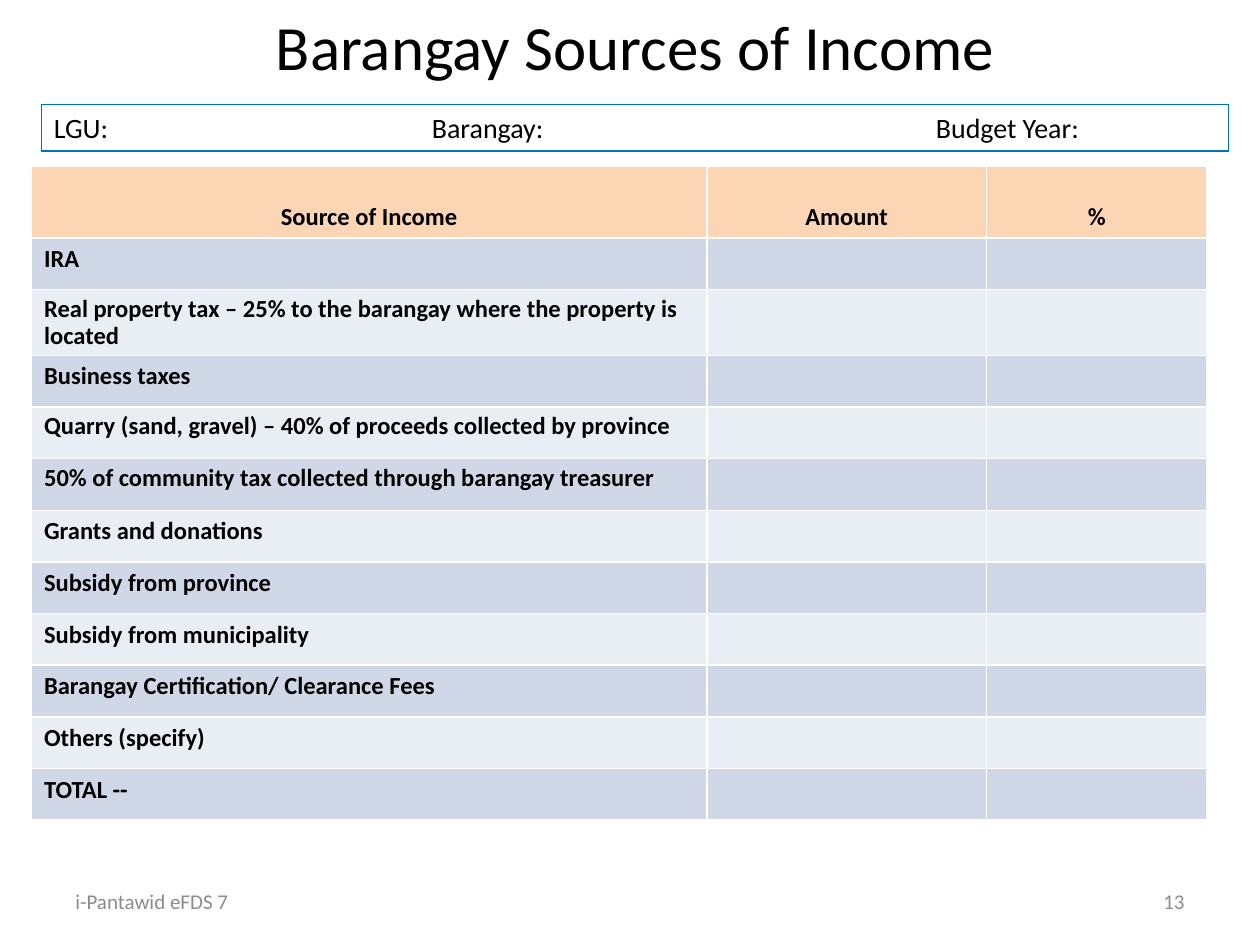
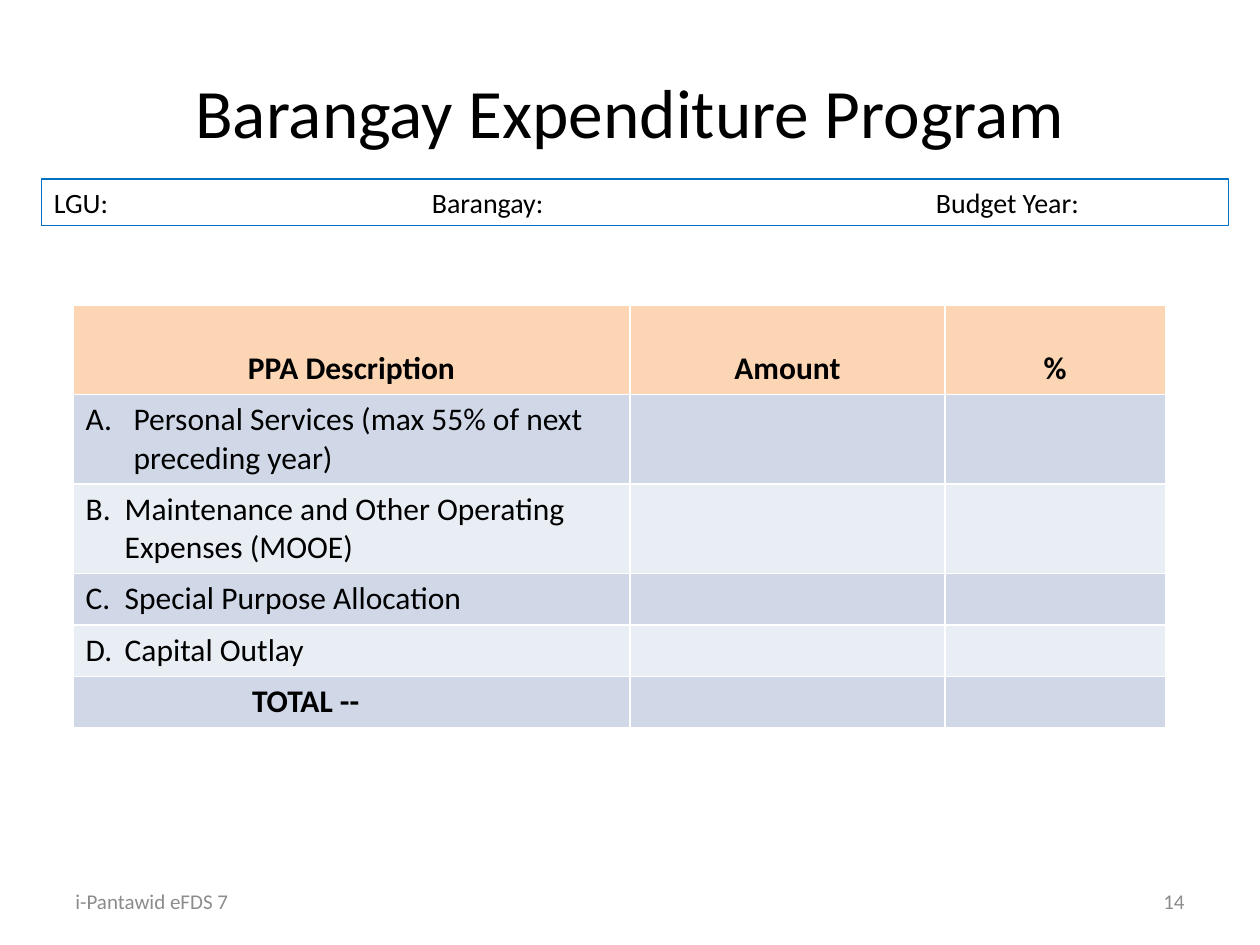
from lxml import etree
from pptx import Presentation
from pptx.dml.color import RGBColor
from pptx.enum.shapes import MSO_SHAPE
from pptx.enum.text import MSO_ANCHOR, MSO_AUTO_SIZE, PP_ALIGN
from pptx.oxml.ns import qn
from pptx.util import Inches, Pt

LEFT, CENTER, RIGHT = PP_ALIGN.LEFT, PP_ALIGN.CENTER, PP_ALIGN.RIGHT
TOP, MIDDLE, BOTTOM = MSO_ANCHOR.TOP, MSO_ANCHOR.MIDDLE, MSO_ANCHOR.BOTTOM
GROW = MSO_AUTO_SIZE.SHAPE_TO_FIT_TEXT
RECTANGLE = MSO_SHAPE.RECTANGLE

FONT = "Calibri"
BLACK, GREY, BLUE = "000000", "8C8C8C", "0070C0"
HEADER_FILL = "FCD5B5"
BAND_FILLS = ["D0D8E8", "E9EDF4"]
FOOTER = "i-Pantawid eFDS 7"
FORM_TABS = [3, 7]
ROW, HEADER_ROW = 0.41, 0.57
TWO_LINES = 0.71

HANGING = {"margin": 0.31, "first": -0.31}
TIGHT = {"spacing": 0.9}


def color(hex_string):
    return RGBColor.from_string(hex_string)


def write(frame, text, size, hue=BLACK, bold=False, align=LEFT, anchor=TOP,
          margin=0, first=0, spacing=None, numbered=False):
    """Put one formatted paragraph in a text frame; indents are in inches."""
    frame.word_wrap = True
    frame.vertical_anchor = anchor
    para = frame.paragraphs[0]
    para.alignment = align
    if spacing:
        para.line_spacing = spacing
    properties = para._p.get_or_add_pPr()
    if margin:
        properties.set("marL", str(Inches(margin)))
        properties.set("indent", str(Inches(first)))
    if numbered:
        etree.SubElement(properties, qn("a:buFont"), typeface="+mj-lt")
        etree.SubElement(properties, qn("a:buAutoNum"), type="alphaUcPeriod")
    span = para.add_run()
    span.text = text
    span.font.color.rgb = color(hue)
    for name, value in {"name": FONT, "size": Pt(size), "bold": bold}.items():
        setattr(span.font, name, value)
    return para


# Each table row: text, row height, paragraph format
pages = [
    {
        "title": "Barangay Sources of Income", "title_size": 36,
        "title_at": (0.25, 0.06, 9.58, 0.75), "form_top": 0.83,
        "number": "13", "table_at": (0.25, 1.32), "columns": [5.36, 2.22, 1.75],
        "heads": ["Source of Income", "Amount", "%"],
        "head_height": HEADER_ROW, "size": 14, "bold": True,
        "rows": [
            ("IRA", ROW, HANGING),
            ("Real property tax – 25% to the barangay where the property is located",
             0.52, TIGHT),
            ("Business taxes", ROW, HANGING),
            ("Quarry (sand, gravel) – 40% of proceeds collected by province", ROW, TIGHT),
            ("50% of community tax collected through barangay treasurer", ROW, TIGHT),
            ("Grants and donations", ROW, HANGING),
            ("Subsidy from province", ROW, HANGING),
            ("Subsidy from municipality", ROW, HANGING),
            ("Barangay Certification/ Clearance Fees", ROW, HANGING),
            ("Others (specify)", ROW, HANGING),
            ("TOTAL --", ROW, HANGING),
        ],
    },
    {
        "title": "Barangay Expenditure Program", "title_size": 39.6,
        "title_at": (0.5, 0.55, 9, 0.8), "form_top": 1.42,
        "number": "14", "table_at": (0.58, 2.42), "columns": [4.42, 2.5, 1.75],
        "heads": ["PPA Description", "Amount", "%"],
        "head_height": TWO_LINES, "size": 18, "bold": False,
        "rows": [
            ("Personal Services (max 55% of next preceding year)", TWO_LINES,
             {"margin": 0.38, "first": -0.38, "numbered": True}),
            ("B.\tMaintenance and Other Operating Expenses (MOOE)", TWO_LINES, HANGING),
            ("C.\tSpecial Purpose Allocation", ROW, HANGING),
            ("D.\tCapital Outlay", ROW, HANGING),
            ("TOTAL --", ROW, {"margin": 1.32, "bold": True}),
        ],
    },
]

deck = Presentation()
deck.slide_width, deck.slide_height = Inches(10), Inches(7.5)
blank = deck.slide_layouts[6]

for page in pages:
    slide = deck.slides.add_slide(blank)

    # Title
    title = slide.shapes.add_textbox(*map(Inches, page["title_at"])).text_frame
    title.margin_top = title.margin_bottom = 0
    write(title, page["title"], page["title_size"], align=CENTER)

    # Income or expenditure table
    heights = [page["head_height"]] + [height for _, height, _ in page["rows"]]
    columns = page["columns"]
    table = slide.shapes.add_table(
        len(heights), len(columns), *map(Inches, page["table_at"]),
        Inches(sum(columns)), Inches(sum(heights))).table
    for column, width in zip(table.columns, columns):
        column.width = Inches(width)
    for index, (row, height) in enumerate(zip(table.rows, heights)):
        row.height = Inches(height)
        for cell in row.cells:
            cell.fill.solid()
            fill = BAND_FILLS[(index - 1) % 2] if index else HEADER_FILL
            cell.fill.fore_color.rgb = color(fill)
    for cell, head in zip(table.rows[0].cells, page["heads"]):
        write(cell.text_frame, head, page["size"], bold=True, align=CENTER)
        cell.vertical_anchor = BOTTOM
    for index, (text, _, style) in enumerate(page["rows"], start=1):
        write(table.cell(index, 0).text_frame, text, page["size"],
              **{"bold": page["bold"], **style})

    # Form line
    form = slide.shapes.add_shape(
        RECTANGLE, *map(Inches, (0.33, page["form_top"], 9.42, 0.37)))
    form.shadow.inherit = False
    form.fill.background()
    form.line.color.rgb = color(BLUE)
    form.line.width = Pt(0.75)
    para = write(form.text_frame, "LGU:\tBarangay:\tBudget Year:", 16)
    form.text_frame.auto_size = GROW
    stops = etree.SubElement(para._p.get_or_add_pPr(), qn("a:tabLst"))
    for stop in FORM_TABS:
        etree.SubElement(stops, qn("a:tab"), pos=str(Inches(stop)), algn="l")

    # Footer
    for text, left, align in [(FOOTER, 0.5, LEFT), (page["number"], 7.17, RIGHT)]:
        box = slide.shapes.add_textbox(*map(Inches, (left, 6.95, 2.33, 0.4)))
        write(box.text_frame, text, 12, GREY, align=align, anchor=MIDDLE)

deck.save("out.pptx")
